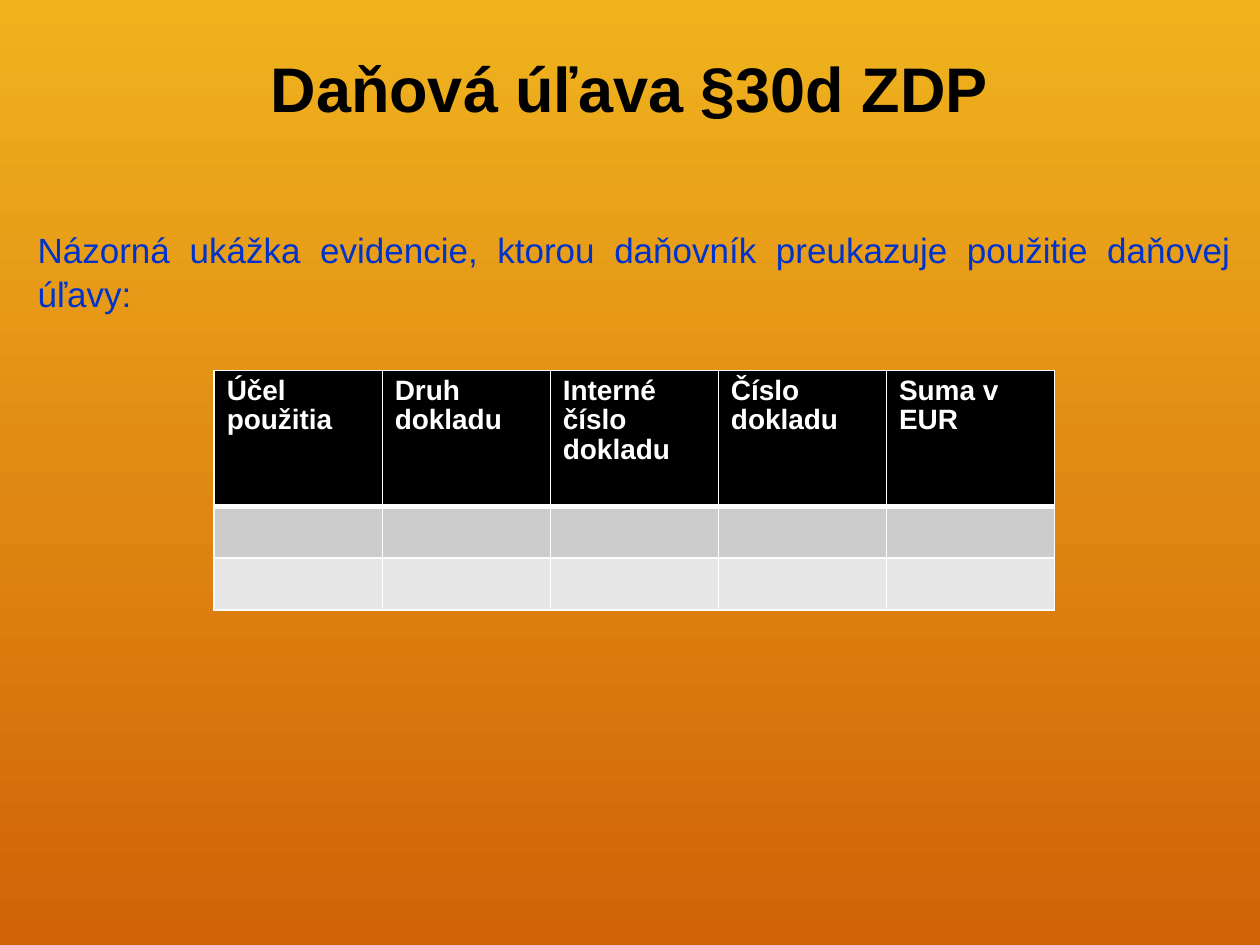
from dataclasses import dataclass

from lxml.etree import SubElement
from pptx import Presentation
from pptx.dml.color import RGBColor
from pptx.enum.text import MSO_ANCHOR, PP_ALIGN
from pptx.oxml.ns import qn
from pptx.util import Inches, Pt


@dataclass(frozen=True)
class Theme:
    font: str = "Arial"
    sky: str = "F0B31E"
    ground: str = "D16207"
    black: str = "000000"
    white: str = "FFFFFF"
    blue: str = "0033CC"
    bands: tuple = ("CCCCCC", "E7E7E7")
    title_size: int = 36
    body_size: int = 20
    header_size: int = 16


theme = Theme()


def write(frame, text, *, size, color, bold=False, align=PP_ALIGN.LEFT, spacing=0.95):
    frame.word_wrap = True
    para = frame.paragraphs[0]
    para.alignment = align
    para.line_spacing = spacing
    span = para.add_run()
    span.text = text
    span.font.name = theme.font
    span.font.size = Pt(size)
    span.font.bold = bold
    span.font.color.rgb = RGBColor.from_string(color)


def style_cell(cell, fill, bottom=1, top=1):
    """Fill a cell and rule its four sides; the widths are in points."""
    properties = cell._tc.get_or_add_tcPr()
    for side, width in (("lnL", 1), ("lnR", 1), ("lnT", top), ("lnB", bottom)):
        line = SubElement(properties, qn(f"a:{side}"), w=str(Pt(width)))
        solid = SubElement(line, qn("a:solidFill"))
        SubElement(solid, qn("a:srgbClr"), val=theme.white)
    cell.fill.solid()
    cell.fill.fore_color.rgb = RGBColor.from_string(fill)


deck = Presentation()
deck.slide_width, deck.slide_height = Inches(10), Inches(7.5)
page = deck.slides.add_slide(deck.slide_layouts[6])

# Background, running from top to bottom
backdrop = page.background.fill
backdrop.gradient()
backdrop.gradient_angle = 270
for stop, position, color in zip(backdrop.gradient_stops, (0, 1), (theme.sky, theme.ground)):
    stop.position = position
    stop.color.rgb = RGBColor.from_string(color)

# Title and introduction
title = page.shapes.add_textbox(Inches(0.85), Inches(0.1), Inches(8.29), Inches(1.25))
title.text_frame.vertical_anchor = MSO_ANCHOR.MIDDLE
write(title.text_frame, "Daňová úľava §30d ZDP", size=theme.title_size,
      color=theme.black, bold=True, align=PP_ALIGN.CENTER)

intro = page.shapes.add_textbox(Inches(0.2), Inches(1.75), Inches(9.67), Inches(5.59))
write(intro.text_frame,
      "Názorná ukážka evidencie, ktorou daňovník preukazuje použitie daňovej úľavy:",
      size=theme.body_size, color=theme.blue, align=PP_ALIGN.JUSTIFY, spacing=1.05)

# Record table: a header and two empty rows
headings = ["Účel použitia", "Druh dokladu", "Interné číslo dokladu",
            "Číslo dokladu", "Suma v EUR"]
row_heights = [1.08, 0.41, 0.41]
column_width = Inches(6.67 / len(headings))
table = page.shapes.add_table(
    len(row_heights), len(headings), Inches(1.7), Inches(2.94),
    column_width * len(headings), Inches(sum(row_heights))).table

for row, height in zip(table.rows, row_heights):
    row.height = Inches(height)
for column, heading in enumerate(headings):
    table.columns[column].width = column_width
    header = table.cell(0, column)
    style_cell(header, theme.black, bottom=3)
    write(header.text_frame, heading, size=theme.header_size, color=theme.white, bold=True)
    for row, band in enumerate(theme.bands, start=1):
        style_cell(table.cell(row, column), band, top=3 if row == 1 else 1)

deck.save("out.pptx")
